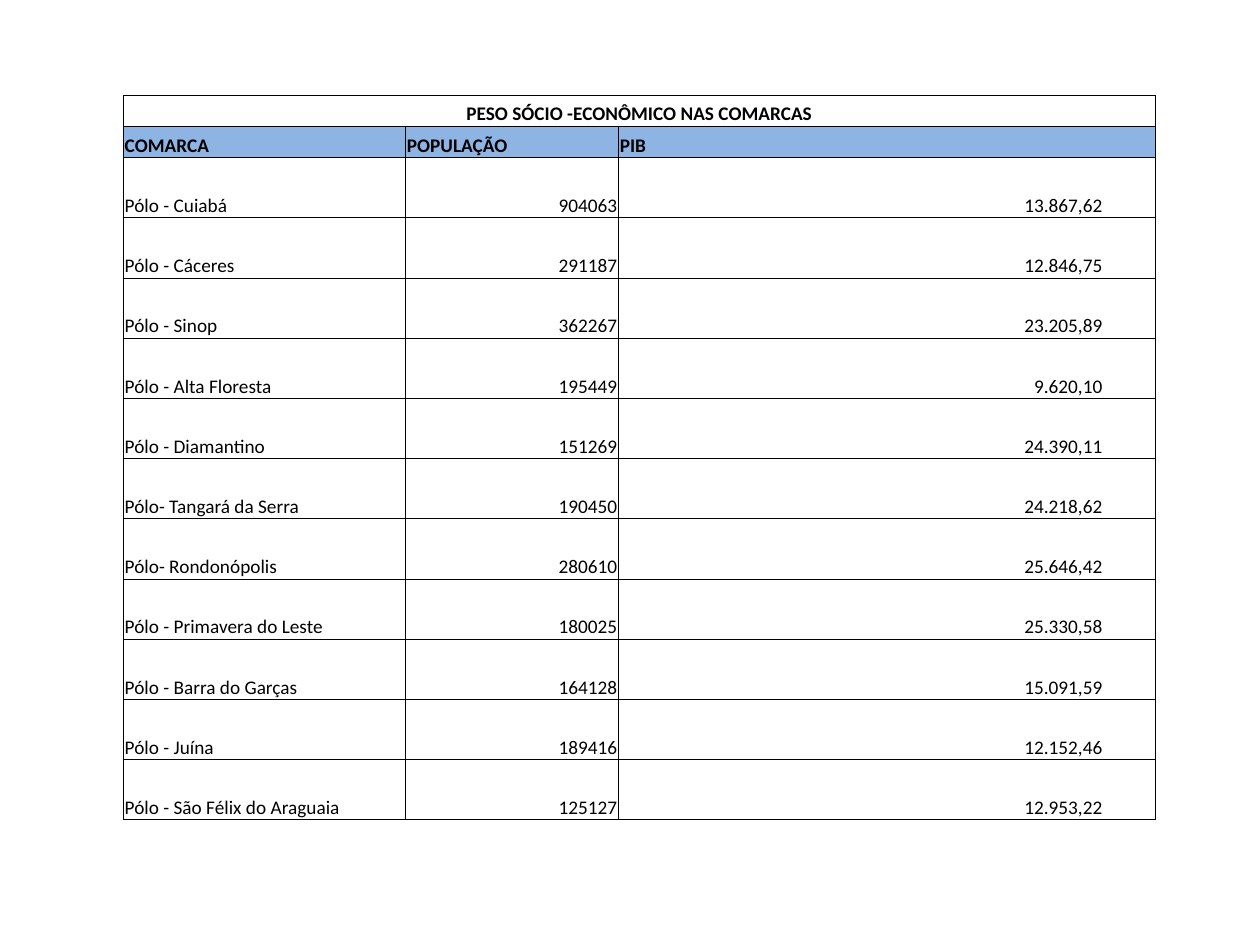
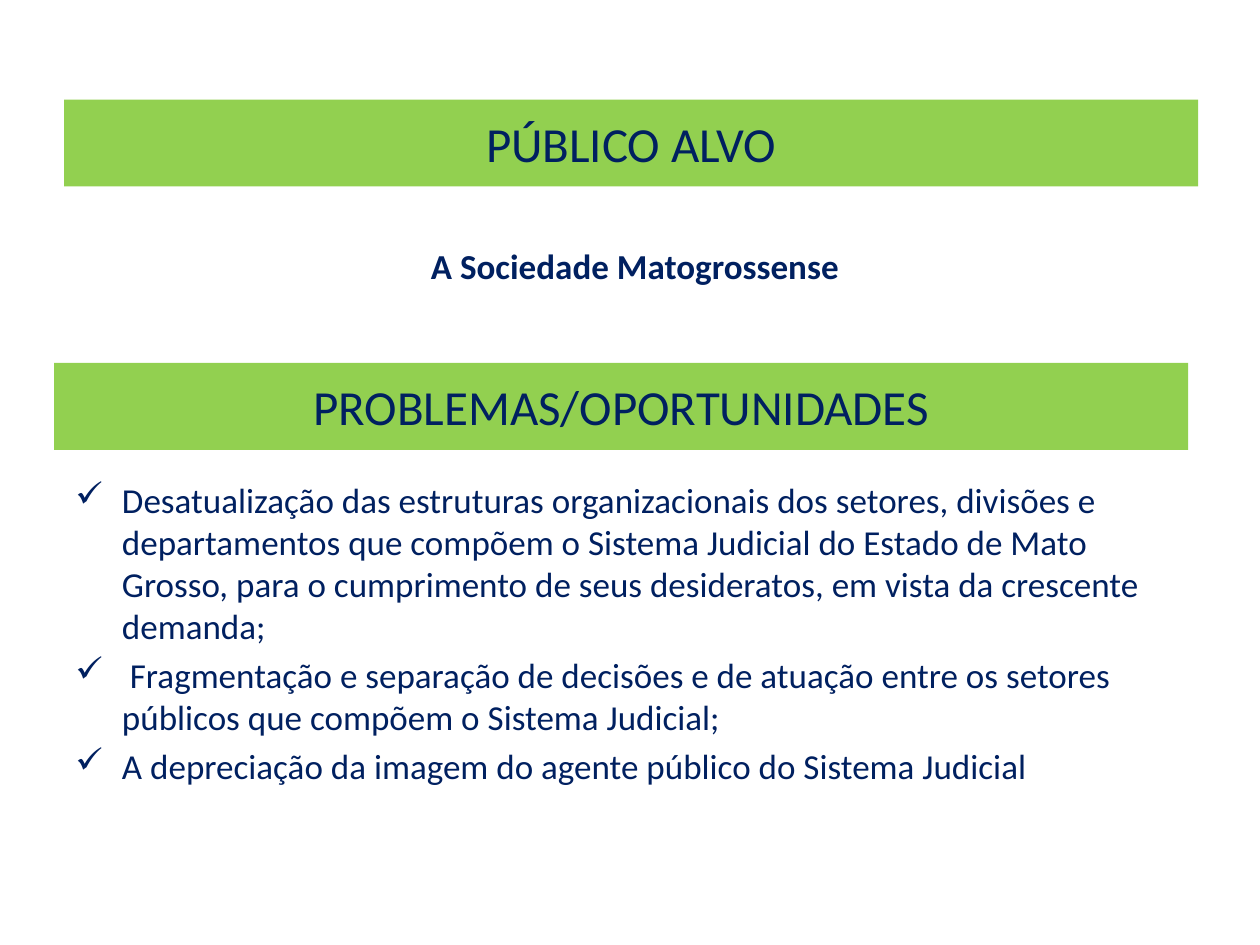
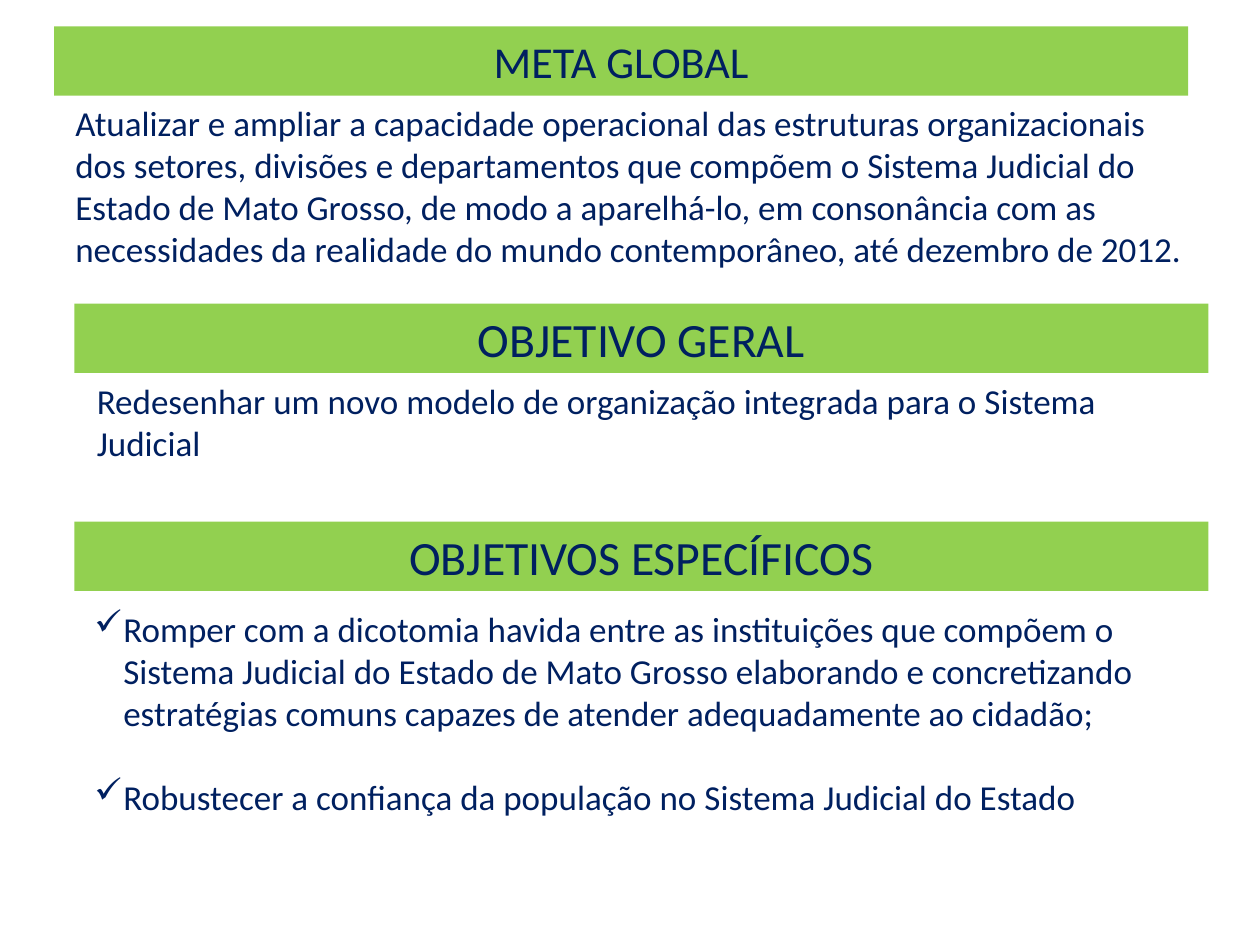
from lxml import etree
from pptx import Presentation
from pptx.dml.color import RGBColor
from pptx.enum.shapes import MSO_SHAPE
from pptx.enum.text import MSO_ANCHOR, PP_ALIGN
from pptx.oxml.ns import qn
from pptx.util import Inches, Pt

RECT = MSO_SHAPE.RECTANGLE
MIDDLE, BOTTOM = MSO_ANCHOR.MIDDLE, MSO_ANCHOR.BOTTOM
LEFT, CENTER, RIGHT = PP_ALIGN.LEFT, PP_ALIGN.CENTER, PP_ALIGN.RIGHT
FONT = "Calibri"
COLORS = {"band": "92D050", "navy": "002060", "head": "8DB4E3", "black": "000000"}

# Table slide
TITLE = "PESO SÓCIO -ECONÔMICO NAS COMARCAS"
HEADS = ("COMARCA", "POPULAÇÃO", "PIB")
TOWNS = [
    ("Pólo - Cuiabá", "904063", "13.867,62"),
    ("Pólo - Cáceres", "291187", "12.846,75"),
    ("Pólo - Sinop", "362267", "23.205,89"),
    ("Pólo - Alta Floresta", "195449", "9.620,10"),
    ("Pólo - Diamantino", "151269", "24.390,11"),
    ("Pólo- Tangará da Serra", "190450", "24.218,62"),
    ("Pólo- Rondonópolis", "280610", "25.646,42"),
    ("Pólo - Primavera do Leste", "180025", "25.330,58"),
    ("Pólo - Barra do Garças", "164128", "15.091,59"),
    ("Pólo - Juína", "189416", "12.152,46"),
    ("Pólo - São Félix do Araguaia", "125127", "12.953,22"),
]
GRID = (0.98, 0.76, 8.19, 5.75)
COLS = (2.24, 1.69, 4.26)
TOP_ROWS = (0.24, 0.25)
ALIGNS = (LEFT, RIGHT, RIGHT)
PADS = (0.01, 0.01, 0.42)

# Text slides: bands are (text, left, top, height, size)
# and texts are (paragraphs, box, style)
PAGES = [
    {
        "bands": [
            ("PÚBLICO ALVO", 0.51, 0.79, 0.69, 28),
            ("PROBLEMAS/OPORTUNIDADES", 0.43, 2.88, 0.69, 28),
        ],
        "texts": [
            (["A Sociedade Matogrossense"], (0.51, 1.89, 9.06, 0.44),
             {"align": CENTER, "bold": True}),
            (["Desatualização das estruturas organizacionais dos setores, divisões e "
              "departamentos que compõem o Sistema Judicial do Estado de Mato Grosso, "
              "para o cumprimento de seus desideratos, em vista da crescente demanda;",
              " Fragmentação e separação de decisões e de atuação entre os setores "
              "públicos que compõem o Sistema Judicial;",
              "A depreciação da imagem do agente público do Sistema Judicial"],
             (0.5, 3.75, 9, 2.91), {"indent": 0.37, "gap": 4}),
        ],
    },
    {
        "bands": [
            ("META GLOBAL", 0.43, 0.21, 0.55, 25.2),
            ("OBJETIVO GERAL", 0.59, 2.41, 0.55, 27.3),
            ("OBJETIVOS ESPECÍFICOS", 0.59, 4.14, 0.55, 27.3),
        ],
        "texts": [
            (["Atualizar e ampliar a capacidade operacional das estruturas "
              "organizacionais dos setores, divisões e departamentos que compõem o "
              "Sistema Judicial do Estado de Mato Grosso, de modo a aparelhá-lo, em "
              "consonância com as necessidades da realidade do mundo contemporâneo, "
              "até dezembro de 2012."], (0.5, 0.76, 9, 1.5), {}),
            (["Redesenhar um novo modelo de organização integrada para o Sistema "
              "Judicial"], (0.67, 2.96, 9, 0.71), {}),
            (["Romper com a dicotomia havida entre as instituições que compõem o "
              "Sistema Judicial do Estado de Mato Grosso elaborando e concretizando "
              "estratégias comuns capazes de atender adequadamente ao cidadão;",
              "Robustecer a confiança da população no Sistema Judicial do Estado"],
             (0.65, 4.77, 8.92, 1.49), {"indent": 0.23, "gap": 24}),
        ],
    },
]


def rgb(name):
    return RGBColor.from_string(COLORS[name])


def write(par, text, size, color="navy", align=LEFT, bold=False):
    par.text = text
    par.alignment = align
    font = par.font
    font.name, font.size, font.bold = FONT, Pt(size), bold
    font.color.rgb = rgb(color)


def add_check(par, indent):
    """Give the paragraph a check mark and a hanging indent."""
    props = par._p.get_or_add_pPr()
    props.set("marL", str(Inches(indent)))
    props.set("indent", str(-Inches(indent)))
    etree.SubElement(props, qn("a:buChar")).set("char", "✓")


def add_band(slide, text, left, top, height, size):
    band = slide.shapes.add_shape(
        RECT, Inches(left), Inches(top), Inches(9), Inches(height))
    band.shadow.inherit = False
    band.fill.solid()
    band.fill.fore_color.rgb = rgb("band")
    band.line.fill.background()
    frame = band.text_frame
    frame.vertical_anchor = MIDDLE
    write(frame.paragraphs[0], text, size, align=CENTER)


def add_text(slide, lines, box, align=LEFT, bold=False, indent=0, gap=0):
    frame = slide.shapes.add_textbox(*map(Inches, box)).text_frame
    frame.word_wrap = True
    for i, line in enumerate(lines):
        par = frame.add_paragraph() if i else frame.paragraphs[0]
        write(par, line, 20, align=align, bold=bold)
        if i:
            par.space_before = Pt(gap)
        if indent:
            add_check(par, indent)


def add_edges(cell):
    props = cell._tc.get_or_add_tcPr()
    for side in ("lnL", "lnR", "lnT", "lnB"):
        edge = etree.SubElement(props, qn(f"a:{side}"), w=str(Pt(0.5)))
        fill = etree.SubElement(edge, qn("a:solidFill"))
        etree.SubElement(fill, qn("a:srgbClr"), val=COLORS["black"])


def add_grid(slide):
    rows = [(TITLE, "", ""), HEADS, *TOWNS]
    table = slide.shapes.add_table(
        len(rows), len(COLS), *map(Inches, GRID)).table
    table.first_row = table.horz_banding = False
    for col, width in zip(table.columns, COLS):
        col.width = Inches(width)
    town_row = (GRID[3] - sum(TOP_ROWS)) / len(TOWNS)
    heights = [*TOP_ROWS, *[town_row] * len(TOWNS)]
    for r, (row, height) in enumerate(zip(rows, heights)):
        table.rows[r].height = Inches(height)
        for c, text in enumerate(row):
            cell = table.cell(r, c)
            top = r < len(TOP_ROWS)
            cell.margin_left = cell.margin_top = Inches(0.01)
            cell.margin_right = Inches(0.01 if top else PADS[c])
            cell.margin_bottom = 0
            cell.vertical_anchor = BOTTOM
            add_edges(cell)
            if row is HEADS:
                cell.fill.solid()
                cell.fill.fore_color.rgb = rgb("head")
            else:
                cell.fill.background()
            align = CENTER if r == 0 else LEFT if top else ALIGNS[c]
            write(cell.text_frame.paragraphs[0], text, 11, "black", align, top)
    table.cell(0, 0).merge(table.cell(0, len(COLS) - 1))


def main():
    deck = Presentation()
    deck.slide_width, deck.slide_height = Inches(10), Inches(7.5)
    blank = deck.slide_layouts[6]
    add_grid(deck.slides.add_slide(blank))
    for page in PAGES:
        slide = deck.slides.add_slide(blank)
        for band in page["bands"]:
            add_band(slide, *band)
        for lines, box, style in page["texts"]:
            add_text(slide, lines, box, **style)
    deck.save("out.pptx")


if __name__ == "__main__":
    main()
